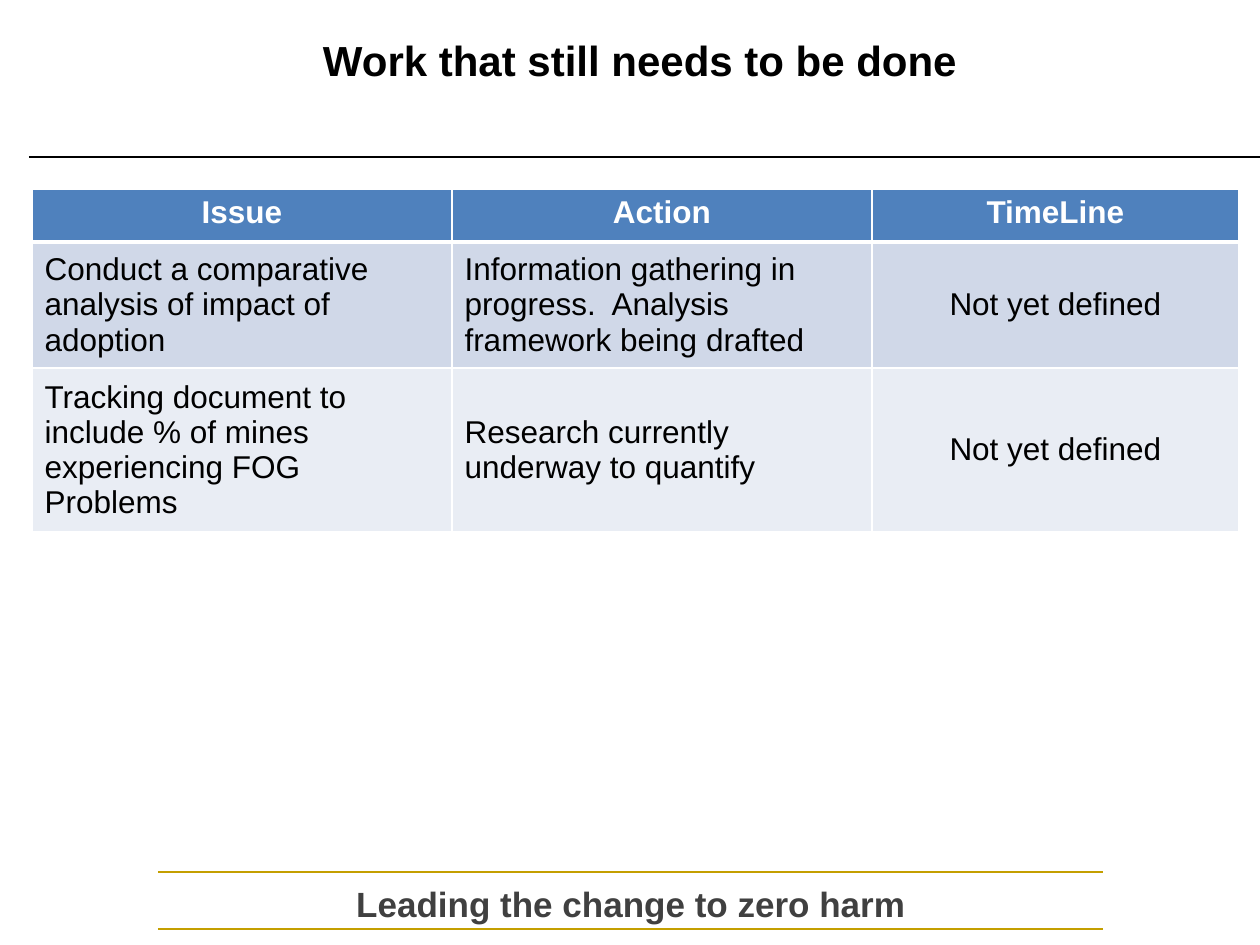
from lxml import etree
from pptx import Presentation
from pptx.dml.color import RGBColor
from pptx.enum.shapes import MSO_CONNECTOR
from pptx.enum.text import MSO_ANCHOR, PP_ALIGN
from pptx.oxml.ns import qn
from pptx.util import Emu, Pt

LEFT, CENTER = PP_ALIGN.LEFT, PP_ALIGN.CENTER
TOP, MIDDLE = MSO_ANCHOR.TOP, MSO_ANCHOR.MIDDLE
STRAIGHT = MSO_CONNECTOR.STRAIGHT

# Content
TITLE = "Work that still needs to be done"
MOTTO = "Leading the change to zero harm"
ROWS = [
    ("Issue", "Action", "TimeLine"),
    ("Conduct a comparative analysis of impact of adoption",
     "Information gathering in progress.  Analysis framework being drafted",
     "Not yet defined"),
    ("Tracking document to include % of mines experiencing FOG Problems",
     "Research currently underway to quantify",
     "Not yet defined"),
]

# Theme
THEME = {
    "font": "Arial",
    "title_size": 24, "motto_size": 20, "table_size": 18,
    "text": "000000", "motto": "404040", "header_text": "FFFFFF",
    "gold": "C49F00", "border": "FFFFFF",
    "row_fills": ("4F81BD", "D0D8E8", "E9EDF4"),
}

# Geometry in px
SLIDE_SIZE = (1260, 945)
TITLE_BOX = (20, 21, 1240, 78)
MOTTO_BOX = (178, 876, 906, 49)
TABLE_LEFT, TABLE_TOP = 32, 189
COLUMN_WIDTHS = (420, 420, 367)
ROW_HEIGHTS = (53, 105, 113)
RULES = [  # left, right, y, colour, points
    (158, 1103, 872, THEME["gold"], 1),
    (158, 1103, 929, THEME["gold"], 1),
    (29, 1260, 157, THEME["text"], 0.75),
]


def px(value):
    return Emu(round(value * 914400 / 126))


def add_text(frame, text, size, color, bold, align, anchor):
    frame.word_wrap = True
    frame.vertical_anchor = anchor
    paragraph = frame.paragraphs[0]
    paragraph.alignment = align
    run = paragraph.add_run()
    run.text = text
    run.font.name = THEME["font"]
    run.font.size = Pt(size)
    run.font.bold = bold
    run.font.color.rgb = RGBColor.from_string(color)


def add_rule(slide, left, right, y, color, points):
    rule = slide.shapes.add_connector(STRAIGHT, px(left), px(y), px(right), px(y))
    rule.line.color.rgb = RGBColor.from_string(color)
    rule.line.width = Pt(points)
    etree.SubElement(rule._element.spPr, qn("a:effectLst"))


def set_borders(cell, header):
    properties = cell._tc.get_or_add_tcPr()
    for side in ("lnL", "lnR", "lnT", "lnB"):
        points = 3 if header and side == "lnB" else 1
        line = etree.SubElement(properties, qn(f"a:{side}"), w=str(Pt(points)))
        fill = etree.SubElement(line, qn("a:solidFill"))
        etree.SubElement(fill, qn("a:srgbClr"), val=THEME["border"])


def add_table(slide):
    table = slide.shapes.add_table(
        len(ROWS), len(COLUMN_WIDTHS), px(TABLE_LEFT), px(TABLE_TOP),
        px(sum(COLUMN_WIDTHS)), px(sum(ROW_HEIGHTS))).table
    for column, width in zip(table.columns, COLUMN_WIDTHS):
        column.width = px(width)
    for row, height in zip(table.rows, ROW_HEIGHTS):
        row.height = px(height)
    for row_index, texts in enumerate(ROWS):
        header = row_index == 0
        for column_index, text in enumerate(texts):
            cell = table.cell(row_index, column_index)
            centered = header or column_index == len(texts) - 1
            add_text(cell.text_frame, text, THEME["table_size"],
                     THEME["header_text" if header else "text"], header,
                     CENTER if centered else LEFT, None)
            cell.vertical_anchor = TOP if header else MIDDLE
            set_borders(cell, header)
            cell.fill.solid()
            cell.fill.fore_color.rgb = RGBColor.from_string(THEME["row_fills"][row_index])


def main():
    presentation = Presentation()
    presentation.slide_width, presentation.slide_height = map(px, SLIDE_SIZE)
    slide = presentation.slides.add_slide(presentation.slide_layouts[5])

    # Rules above the table and around the motto
    for rule in RULES:
        add_rule(slide, *rule)

    # Title
    title = slide.shapes.title
    title.left, title.top, title.width, title.height = map(px, TITLE_BOX)
    add_text(title.text_frame, TITLE, THEME["title_size"], THEME["text"],
             True, CENTER, MIDDLE)

    # Motto
    motto = slide.shapes.add_textbox(*map(px, MOTTO_BOX))
    add_text(motto.text_frame, MOTTO, THEME["motto_size"], THEME["motto"],
             True, CENTER, TOP)

    # Table of open issues
    add_table(slide)
    presentation.save("out.pptx")


if __name__ == "__main__":
    main()
